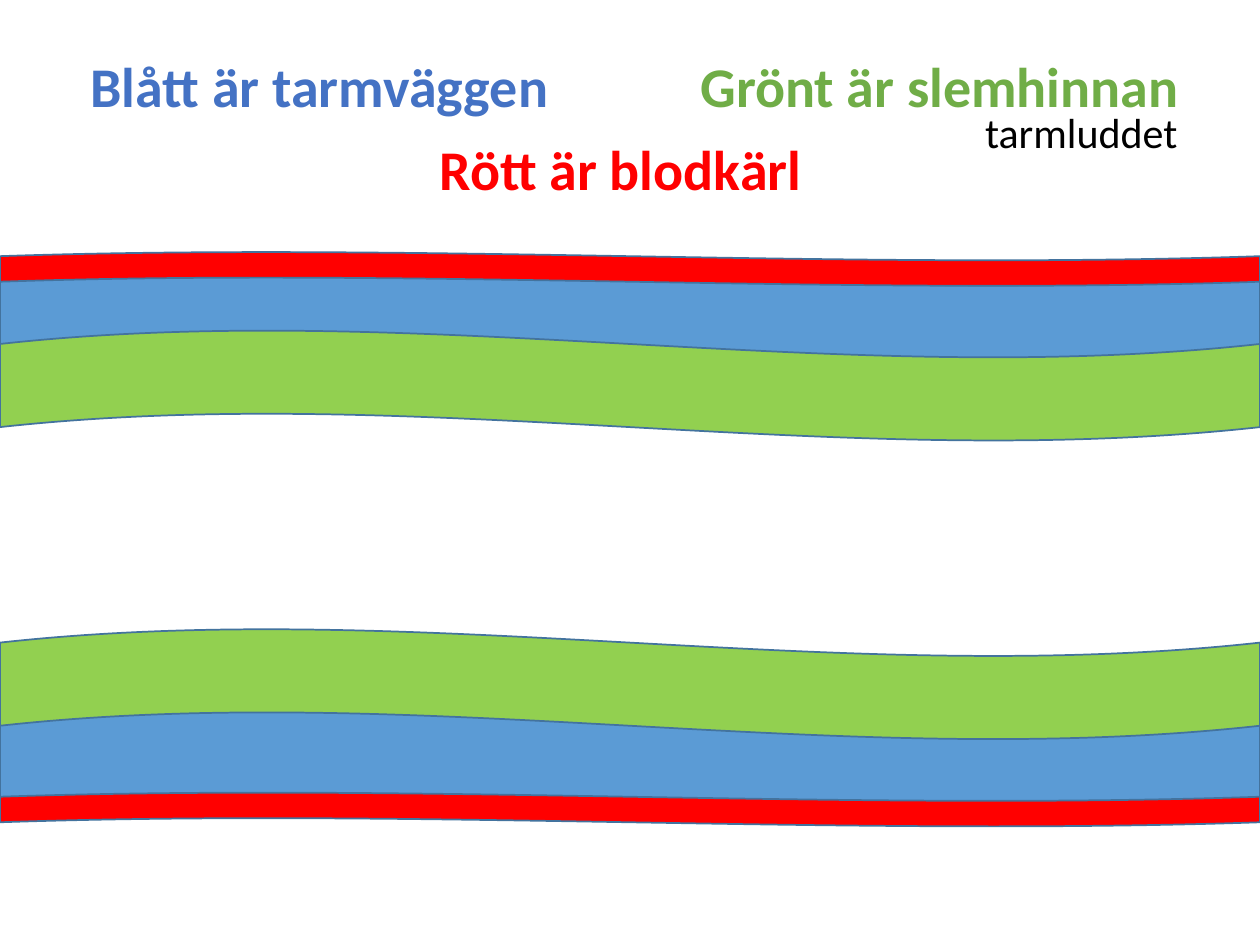
from dataclasses import dataclass

from pptx import Presentation
from pptx.dml.color import RGBColor
from pptx.enum.shapes import MSO_SHAPE as Preset
from pptx.enum.text import MSO_AUTO_SIZE as AutoSize
from pptx.slide import Slide
from pptx.util import Pt

COLORS = {
    "wall": "5B9BD5",
    "mucosa": "92D050",
    "vessel": "FF0000",
    "outline": "43739E",
    "wall_label": "4472C4",
    "mucosa_label": "70AD47",
    "villi_label": "000000",
}
SLIDE_WIDTH, SLIDE_HEIGHT = 720, 540
LAYER_HEIGHT, VESSEL_HEIGHT = 63.36, 19.44


@dataclass(frozen=True)
class Layer:
    top: float
    height: float
    color: str


@dataclass(frozen=True)
class Label:
    text: str
    left: float
    top: float
    width: float
    height: float
    color: str
    size: int = 32
    bold: bool = True
    wrap: bool = True


LAYERS = [
    Layer(406.08, LAYER_HEIGHT, "wall"),
    Layer(359.28, LAYER_HEIGHT, "mucosa"),
    Layer(147.6, LAYER_HEIGHT, "wall"),
    Layer(188.64, LAYER_HEIGHT, "mucosa"),
    Layer(452.88, VESSEL_HEIGHT, "vessel"),
    Layer(144, VESSEL_HEIGHT, "vessel"),
]
LABELS = [
    Label("Blått är tarmväggen", 44.64, 25.92, 293.76, 46.08, "wall_label"),
    Label("Grönt är slemhinnan", 393.12, 25.92, 296.64, 46.08, "mucosa_label"),
    Label("Rött är blodkärl", 244.08, 73.44, 231.12, 46.08, "vessel", wrap=False),
    Label("tarmluddet", 555.84, 57.6, 139.68, 36, "villi_label", size=24, bold=False),
]


def color_of(name: str) -> RGBColor:
    return RGBColor.from_string(COLORS[name])


def draw_layer(slide: Slide, layer: Layer) -> None:
    wave = slide.shapes.add_shape(
        Preset.WAVE, Pt(0), Pt(layer.top), Pt(SLIDE_WIDTH), Pt(layer.height)
    )
    wave.shadow.inherit = False
    wave.fill.solid()
    wave.fill.fore_color.rgb = color_of(layer.color)
    wave.line.color.rgb = color_of("outline")
    wave.line.width = Pt(1)


def draw_label(slide: Slide, label: Label) -> None:
    box = slide.shapes.add_textbox(
        Pt(label.left), Pt(label.top), Pt(label.width), Pt(label.height)
    )
    frame = box.text_frame
    frame.word_wrap = label.wrap
    frame.auto_size = AutoSize.SHAPE_TO_FIT_TEXT
    para = frame.paragraphs[0]
    para.text = label.text
    para.font.name = "Calibri"
    para.font.size = Pt(label.size)
    para.font.bold = label.bold
    para.font.color.rgb = color_of(label.color)


def main() -> None:
    deck = Presentation()
    deck.slide_width, deck.slide_height = Pt(SLIDE_WIDTH), Pt(SLIDE_HEIGHT)
    slide = deck.slides.add_slide(deck.slide_layouts.get_by_name("Blank"))
    for layer in LAYERS:
        draw_layer(slide, layer)
    for label in LABELS:
        draw_label(slide, label)
    deck.save("out.pptx")


if __name__ == "__main__":
    main()
